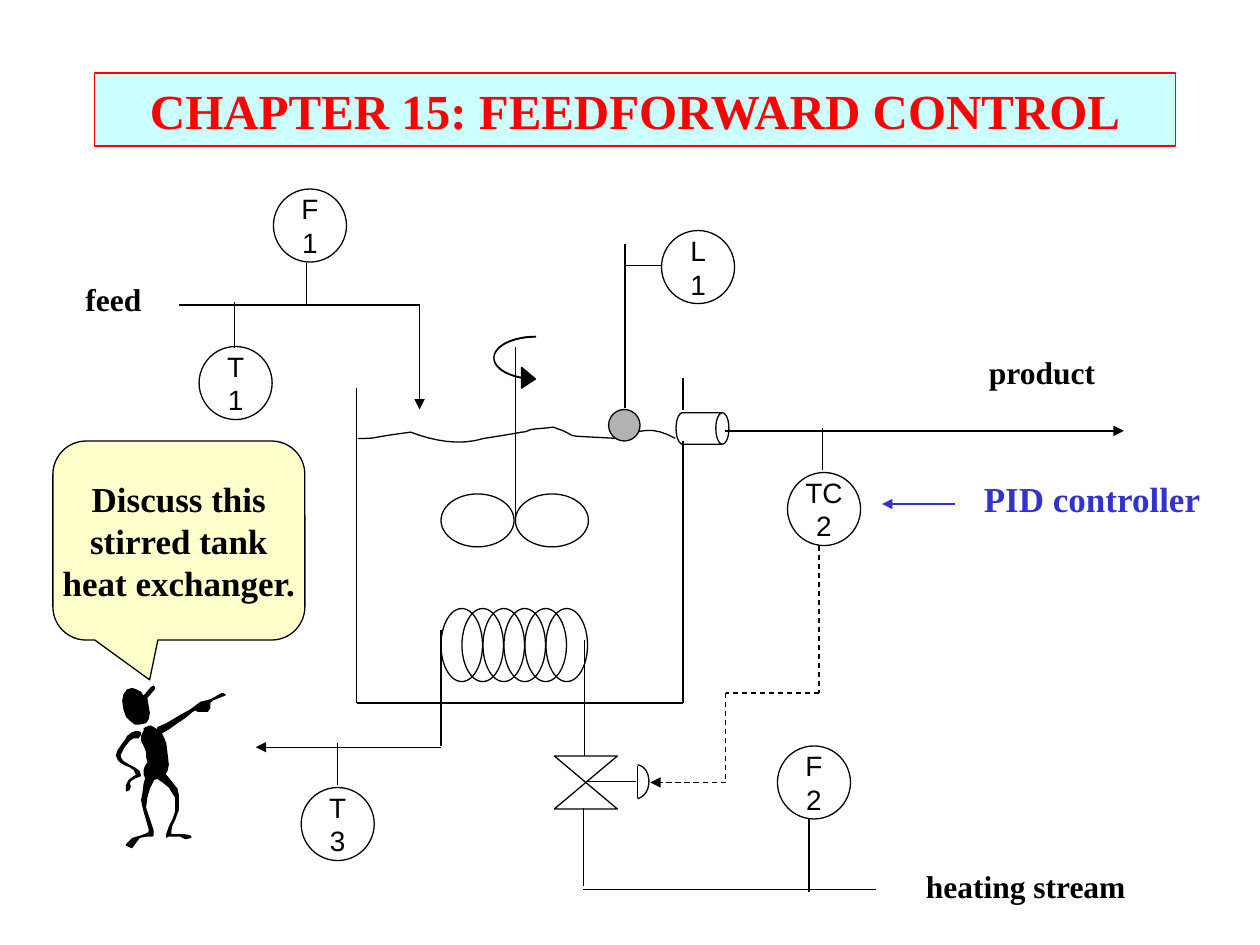
from lxml import etree
from pptx import Presentation
from pptx.dml.color import RGBColor
from pptx.enum.dml import MSO_LINE
from pptx.enum.shapes import MSO_CONNECTOR, MSO_SHAPE
from pptx.enum.text import MSO_ANCHOR, MSO_AUTO_SIZE, PP_ALIGN
from pptx.oxml.ns import qn
from pptx.util import Inches, Pt

BLACK = RGBColor(0x00, 0x00, 0x00)
RED = RGBColor(0xFF, 0x00, 0x00)
BLUE = RGBColor(0x33, 0x33, 0xCC)
GRAY = RGBColor(0xB2, 0xB2, 0xB2)
CYAN = RGBColor(0xCC, 0xFF, 0xFF)
YELLOW = RGBColor(0xFF, 0xFF, 0xCC)

STRAIGHT = MSO_CONNECTOR.STRAIGHT
DASH = MSO_LINE.DASH
ELLIPSE, CAN = MSO_SHAPE.OVAL, MSO_SHAPE.CAN
STIRRING_ARROW = MSO_SHAPE.CURVED_RIGHT_ARROW
CALLOUT = MSO_SHAPE.ROUNDED_RECTANGULAR_CALLOUT
LEFT, CENTER = PP_ALIGN.LEFT, PP_ALIGN.CENTER
TOP, MIDDLE = MSO_ANCHOR.TOP, MSO_ANCHOR.MIDDLE
NO_FIT, GROW = MSO_AUTO_SIZE.NONE, MSO_AUTO_SIZE.SHAPE_TO_FIT_TEXT

TITLE_ONLY_LAYOUT = 5
INSTRUMENT_SIZE = 0.58
CURVE_STEPS = 8


def write_text(shape, text, *, size, font="Times New Roman", color=BLACK, bold=True,
               align=CENTER, anchor=MIDDLE, wrap=False, fit=NO_FIT):
    frame = shape.text_frame
    frame.text = text
    frame.word_wrap = wrap
    frame.auto_size = fit
    frame.vertical_anchor = anchor
    for paragraph in frame.paragraphs:
        paragraph.alignment = align
        paragraph.font.name = font
        paragraph.font.size = Pt(size)
        paragraph.font.bold = bold
        paragraph.font.color.rgb = color


def curve_points(start, segments):
    """Turn cubic segments (control, control, end) into a list of points."""
    points = [start]
    for first, second, end in segments:
        begin = points[-1]
        for step in range(1, CURVE_STEPS + 1):
            t = step / CURVE_STEPS
            points.append(tuple(
                (1 - t) ** 3 * a + 3 * (1 - t) ** 2 * t * b + 3 * (1 - t) * t ** 2 * c + t ** 3 * d
                for a, b, c, d in zip(begin, first, second, end)))
    return points


class Diagram:
    line_width = Pt(0.75)

    def __init__(self, slide):
        self.slide = slide
        self.shapes = slide.shapes

    def paint(self, shape, fill=None, line=BLACK):
        if fill is None:
            shape.fill.background()
        else:
            shape.fill.solid()
            shape.fill.fore_color.rgb = fill
        if line is None:
            shape.line.fill.background()
        else:
            shape.line.color.rgb = line
            shape.line.width = self.line_width

    def title(self, text, left, top, width, height):
        title = self.shapes.title
        title.left, title.top = Inches(left), Inches(top)
        title.width, title.height = Inches(width), Inches(height)
        self.paint(title, CYAN, RED)
        write_text(title, text, size=28, color=RED, wrap=True)

    def shape(self, kind, left, top, width, height, fill=None, adjustments=()):
        shape = self.shapes.add_shape(kind, Inches(left), Inches(top), Inches(width), Inches(height))
        shape.shadow.inherit = False
        self.paint(shape, fill)
        for index, value in enumerate(adjustments):
            shape.adjustments[index] = value
        return shape

    def instrument(self, text, left, top):
        circle = self.shape(ELLIPSE, left, top, INSTRUMENT_SIZE, INSTRUMENT_SIZE)
        write_text(circle, text, size=16, font="Arial", bold=False)

    def line(self, start, end, color=BLACK, arrow=False, dashed=False):
        connector = self.shapes.add_connector(STRAIGHT, *map(Inches, (*start, *end)))
        connector.line.color.rgb = color
        connector.line.width = self.line_width
        if dashed:
            connector.line.dash_style = DASH
        properties = connector._element.spPr
        if arrow:
            etree.SubElement(properties.find(qn("a:ln")), qn("a:tailEnd"), type="triangle")
        etree.SubElement(properties, qn("a:effectLst"))

    def pipe(self, *points, arrow=False, dashed=False):
        last = len(points) - 2
        for index, (start, end) in enumerate(zip(points, points[1:])):
            self.line(start, end, arrow=arrow and index == last, dashed=dashed)

    def outline(self, points, fill=None, line=BLACK, close=True):
        points = [(Inches(x), Inches(y)) for x, y in points]
        builder = self.shapes.build_freeform(*points[0])
        builder.add_line_segments(points[1:], close=close)
        shape = builder.convert_to_shape()
        shape.shadow.inherit = False
        self.paint(shape, fill, line)

    def label(self, text, left, top, width, height, **text_format):
        box = self.shapes.add_textbox(Inches(left), Inches(top), Inches(width), Inches(height))
        write_text(box, text, align=LEFT, anchor=TOP, fit=GROW, **text_format)


WATER_SURFACE = curve_points((5.36, 3.48), [
    ((5.18, 3.38), (5.09, 3.41), (4.9, 3.48)), ((4.36, 3.45), (4.66, 3.48), (4.39, 3.39)),
    ((4.33, 3.4), (4.27, 3.4), (4.21, 3.41)), ((4.19, 3.42), (4.17, 3.43), (4.14, 3.43)),
    ((4.04, 3.45), (3.84, 3.48), (3.84, 3.48)), ((3.65, 3.54), (3.44, 3.5), (3.26, 3.43)),
    ((2.88, 3.48), (3.02, 3.48), (2.84, 3.48))])
VALVE_CAP = curve_points((5.06, 6.07), [
    ((5.12, 6.08), (5.15, 6.14), (5.15, 6.2)), ((5.15, 6.27), (5.12, 6.32), (5.06, 6.34))])

HEAD = [(1.14, 5.52), (1.12, 5.49), (1.08, 5.47), (1.05, 5.46), (1.01, 5.47), (0.98, 5.51),
        (0.97, 5.56), (0.98, 5.63), (1, 5.69), (1.03, 5.72), (1.07, 5.75), (1.11, 5.75),
        (1.16, 5.74), (1.18, 5.71), (1.19, 5.66), (1.18, 5.6), (1.17, 5.54), (1.23, 5.47),
        (1.23, 5.45), (1.22, 5.44), (1.2, 5.45)]
POINTING_ARM = [(1.26, 5.82), (1.24, 5.8), (1.25, 5.77), (1.32, 5.74), (1.42, 5.68), (1.51, 5.63),
                (1.59, 5.57), (1.67, 5.55), (1.76, 5.5), (1.77, 5.5), (1.79, 5.51), (1.79, 5.52),
                (1.69, 5.56), (1.67, 5.58), (1.67, 5.62), (1.65, 5.65), (1.57, 5.65), (1.55, 5.64),
                (1.53, 5.65), (1.47, 5.7), (1.41, 5.74), (1.34, 5.79), (1.27, 5.83)]
BENT_ARM = [(1.01, 5.84), (1.05, 5.81), (1.09, 5.8), (1.12, 5.81), (1.12, 5.83), (1.1, 5.86),
            (1.06, 5.86), (1.03, 5.88), (0.99, 5.93), (0.96, 5.99), (0.96, 6.01), (0.98, 6.04),
            (1.03, 6.07), (1.07, 6.09), (1.11, 6.12), (1.12, 6.16), (1.07, 6.18), (1.04, 6.2),
            (1.03, 6.22), (1.04, 6.24), (1.03, 6.27), (1.01, 6.28), (1, 6.28), (1, 6.23),
            (1.02, 6.19), (1.06, 6.16), (1.08, 6.15), (1.06, 6.11), (1.03, 6.09), (0.98, 6.07),
            (0.94, 6.04), (0.92, 6), (0.93, 5.96), (0.97, 5.9), (1, 5.86)]
TORSO = [(1.14, 5.78), (1.18, 5.76), (1.2, 5.76), (1.25, 5.79), (1.28, 5.81), (1.3, 5.85),
         (1.32, 5.9), (1.33, 5.98), (1.34, 6.07), (1.33, 6.12), (1.31, 6.15), (1.27, 6.18),
         (1.22, 6.19), (1.16, 6.19), (1.14, 6.15), (1.14, 6.11), (1.15, 6.08), (1.17, 6.05),
         (1.16, 6.01), (1.16, 5.97), (1.14, 5.92), (1.12, 5.88), (1.12, 5.84), (1.14, 5.8)]
RIGHT_LEG = [(1.25, 6.15), (1.25, 6.13), (1.27, 6.11), (1.29, 6.11), (1.37, 6.21), (1.41, 6.26),
             (1.42, 6.31), (1.42, 6.43), (1.39, 6.51), (1.37, 6.55), (1.36, 6.6), (1.36, 6.62),
             (1.46, 6.62), (1.51, 6.63), (1.52, 6.64), (1.52, 6.65), (1.48, 6.66), (1.47, 6.66),
             (1.43, 6.64), (1.34, 6.64), (1.32, 6.65), (1.32, 6.62), (1.34, 6.56), (1.37, 6.5),
             (1.39, 6.44), (1.39, 6.33), (1.37, 6.3), (1.34, 6.25), (1.29, 6.21), (1.26, 6.19),
             (1.25, 6.17)]
LEFT_LEG = [(1.16, 6.15), (1.18, 6.14), (1.22, 6.14), (1.23, 6.16), (1.22, 6.2), (1.19, 6.26),
            (1.17, 6.33), (1.16, 6.41), (1.19, 6.5), (1.22, 6.59), (1.22, 6.63), (1.21, 6.64),
            (1.16, 6.64), (1.11, 6.65), (1.08, 6.69), (1.05, 6.73), (1.04, 6.73), (1, 6.71),
            (1, 6.7), (1.05, 6.65), (1.12, 6.63), (1.17, 6.61), (1.18, 6.6), (1.18, 6.58),
            (1.16, 6.51), (1.14, 6.44), (1.13, 6.4), (1.12, 6.35), (1.13, 6.3), (1.14, 6.22)]


def main():
    presentation = Presentation()
    presentation.slide_width, presentation.slide_height = Inches(10), Inches(7.5)
    layout = presentation.slide_layouts[TITLE_ONLY_LAYOUT]
    diagram = Diagram(presentation.slides.add_slide(layout))
    diagram.title("CHAPTER 15: FEEDFORWARD CONTROL", 0.75, 0.58, 8.58, 0.58)

    # Heating coil
    for turn in range(6):
        diagram.shape(ELLIPSE, 3.5 + turn / 6, 4.83, 0.33, 0.58)
    diagram.pipe((4.64, 5.08), (4.64, 6))
    diagram.pipe((3.5, 5), (3.5, 5.92))
    diagram.pipe((3.5, 5.93), (2.03, 5.93), arrow=True)

    # Tank, outlet and stirrer
    diagram.pipe((2.83, 3.08), (2.83, 5.58), (5.42, 5.58), (5.42, 3.5))
    diagram.pipe((5.42, 3.25), (5.42, 3))
    diagram.shape(CAN, 5.45, 3.19, 0.25, 0.42, adjustments=[0.417]).rotation = 90
    diagram.pipe((4.09, 2.75), (4.09, 4.17))
    for blade_left in (3.5, 4.09):
        diagram.shape(ELLIPSE, blade_left, 3.92, 0.58, 0.42)
    diagram.outline(WATER_SURFACE, close=False)
    diagram.shape(STIRRING_ARROW, 3.92, 2.67, 0.33, 0.42, BLACK, [0.015, 0.5, 0.333])

    # Feed, product and heating streams
    diagram.pipe((1.42, 2.42), (3.33, 2.42), (3.33, 3.25), arrow=True)
    diagram.pipe((5.75, 3.42), (8.92, 3.42), arrow=True)
    diagram.pipe((4.63, 6.41), (4.63, 7.03))
    diagram.pipe((4.63, 7.06), (6.95, 7.06))

    # Control valve
    diagram.outline([(4.4, 6), (4.9, 6), (4.4, 6.42), (4.9, 6.42)])
    diagram.pipe((4.65, 6.2), (5.05, 6.2))
    diagram.pipe((5.06, 6.08), (5.06, 6.33))
    diagram.outline(VALVE_CAP, close=False)

    # Level float
    diagram.shape(ELLIPSE, 4.83, 3.25, 0.25, 0.25, GRAY)
    diagram.pipe((4.96, 3.24), (4.96, 1.94))

    # Instruments with their taps
    for text, left, top, tap_start, tap_end in [
            ("TC\n2", 6.25, 3.75, (6.53, 3.73), (6.53, 3.4)),
            ("T\n1", 1.58, 2.75, (1.86, 2.76), (1.86, 2.4)),
            ("F\n1", 2.17, 1.5, (2.43, 2.09), (2.43, 2.42)),
            ("F\n2", 6.17, 5.92, (6.42, 6.5), (6.42, 7.08)),
            ("T\n3", 2.39, 6.25, (2.68, 6.23), (2.68, 5.9)),
            ("L\n1", 5.25, 1.83, (5.25, 2.11), (4.96, 2.11))]:
        diagram.instrument(text, left, top)
        diagram.line(tap_start, tap_end)

    # Controller signal to the valve
    diagram.pipe((6.5, 4.33), (6.5, 5.5), (5.76, 5.5), (5.76, 6.21), (5.16, 6.21),
                 arrow=True, dashed=True)

    # Labels
    diagram.label("feed", 0.58, 2.17, 0.65, 0.4, size=18)
    diagram.label("product", 7.75, 2.75, 1.05, 0.4, size=18)
    diagram.label("heating stream", 7.25, 6.83, 1.79, 0.4, size=18)
    diagram.label("PID controller", 7.71, 3.74, 2, 0.43, size=20, color=BLUE, wrap=True)
    diagram.line((7.58, 4), (7, 4), color=BLUE, arrow=True)

    # Speaking figure
    callout = diagram.shape(CALLOUT, 0.42, 3.5, 2, 1.58, YELLOW, [-0.116, 0.7, 0.167])
    write_text(callout, "Discuss this\nstirred tank\nheat exchanger.", size=20)
    for body_part in (HEAD, POINTING_ARM, BENT_ARM, TORSO, RIGHT_LEG, LEFT_LEG):
        diagram.outline(body_part, BLACK, line=None)

    presentation.save("out.pptx")


if __name__ == "__main__":
    main()
